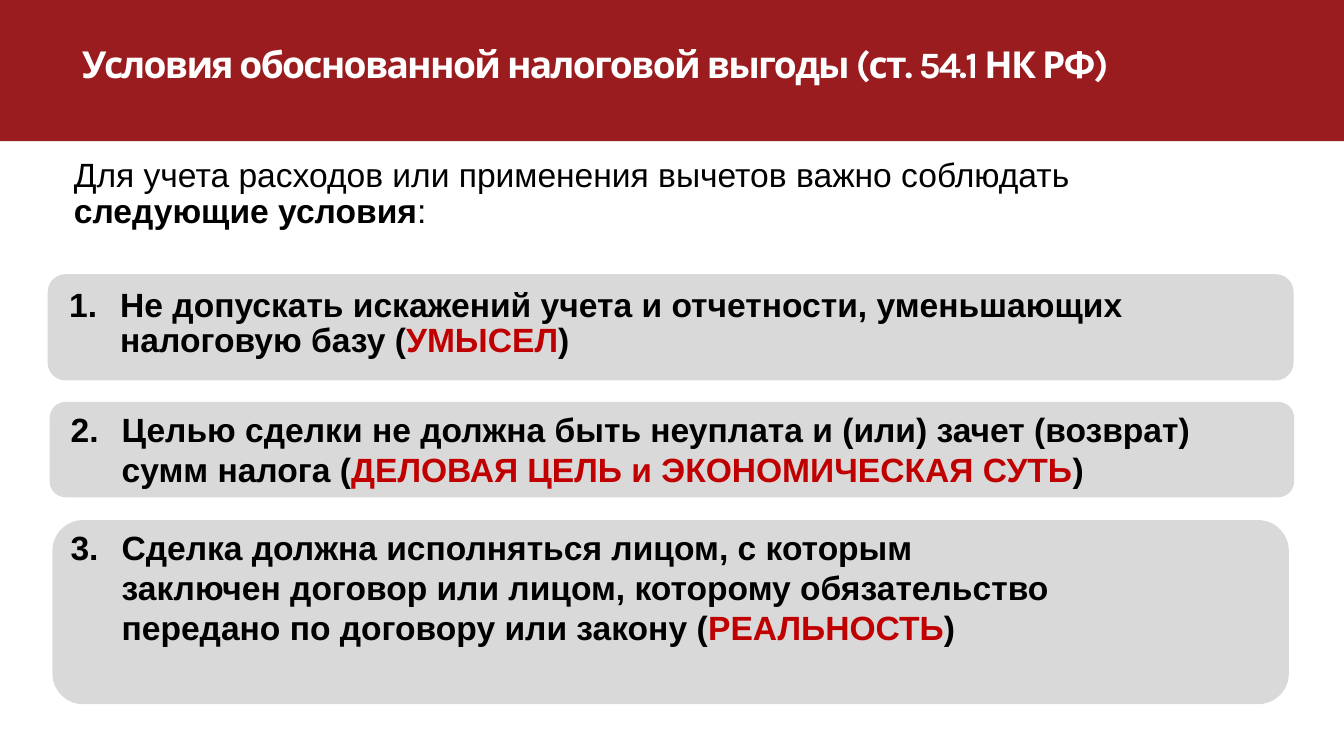
"""Build the slide on the conditions for a justified tax benefit."""
from dataclasses import dataclass

from lxml.etree import SubElement
from pptx import Presentation
from pptx.dml.color import RGBColor as Rgb
from pptx.enum.shapes import MSO_SHAPE as Kind
from pptx.enum.text import MSO_ANCHOR as Anchor
from pptx.enum.text import MSO_AUTO_SIZE as Fit
from pptx.enum.text import PP_ALIGN as Align
from pptx.oxml.ns import qn
from pptx.util import Inches, Pt

UNIT = Inches(0.1)
COLS, ROWS = 100, 56.25


@dataclass(frozen=True)
class Theme:
    band: Rgb = Rgb(0x9A, 0x1C, 0x1F)
    card: Rgb = Rgb(0xD9, 0xD9, 0xD9)
    mark: Rgb = Rgb(0xC0, 0x00, 0x00)
    ink: Rgb = Rgb(0x00, 0x00, 0x00)
    white: Rgb = Rgb(0xFF, 0xFF, 0xFF)
    head: float = 19.9
    body: float = 18
    lead: float = 19
    head_font: str = "Karla"
    body_font: str = "Arial"


@dataclass(frozen=True)
class Area:
    col: float
    row: float
    wide: float
    high: float

    def place(self) -> list[int]:
        return [int(n * UNIT) for n in (self.col, self.row, self.wide, self.high)]


@dataclass(frozen=True)
class Span:
    text: str
    bold: bool = True
    color: Rgb = Theme.ink


@dataclass(frozen=True)
class Rule:
    card: Area
    box: Area
    text: str
    key: str
    tight: bool = False


THEME = Theme()
RULES = [
    Rule(Area(3.55, 20.4, 92.7, 7.9), Area(4.65, 21, 80, 7.3),
         "Не допускать искажений учета и отчетности, уменьшающих налоговую базу (",
         "УМЫСЕЛ", True),
    Rule(Area(3.7, 29.9, 92.6, 7.1), Area(4.75, 29.93, 86.2, 7.1),
         "Целью сделки не должна быть неуплата и (или) зачет (возврат) сумм налога (",
         "ДЕЛОВАЯ ЦЕЛЬ и ЭКОНОМИЧЕСКАЯ СУТЬ"),
    Rule(Area(3.9, 38.7, 92, 13.7), Area(4.75, 38.7, 74.3, 10.1),
         "Сделка должна исполняться лицом, с которым заключен договор или лицом, "
         "которому обязательство передано по договору или закону (",
         "РЕАЛЬНОСТЬ"),
]


def style(run, font: str, size: float, bold: bool, color: Rgb) -> None:
    run.font.name = font
    run.font.size = Pt(size)
    run.font.bold = bold
    run.font.color.rgb = color


def add_block(slide, kind: Kind, area: Area, color: Rgb) -> None:
    block = slide.shapes.add_shape(kind, *area.place())
    block.shadow.inherit = False
    block.fill.solid()
    block.fill.fore_color.rgb = color
    block.line.fill.background()


def add_text(slide, area: Area, spans: list[Span], tight: bool):
    frame = slide.shapes.add_textbox(*area.place()).text_frame
    frame.word_wrap = True
    frame.margin_left = frame.margin_right = Inches(0.05)
    frame.margin_top = frame.margin_bottom = Inches(0.05)
    para = frame.paragraphs[0]
    para.text = spans[0].text
    for span in spans[1:]:
        para.add_run().text = span.text
    for run, span in zip(para.runs, spans):
        style(run, THEME.body_font, THEME.body, span.bold, span.color)
    if tight:
        para.line_spacing = Pt(THEME.lead)
    return para


def number(para, start: int) -> None:
    props = para._p.get_or_add_pPr()
    props.set("marL", str(Inches(0.38)))
    props.set("indent", str(-Inches(0.38)))
    SubElement(props, qn("a:buFont"), typeface=THEME.body_font)
    SubElement(props, qn("a:buAutoNum"), type="arabicPeriod", startAt=str(start))


def add_title(slide, area: Area, text: str) -> None:
    title = slide.shapes.title
    title.left, title.top, title.width, title.height = area.place()
    title.element.getparent().append(title.element)
    frame = title.text_frame
    frame.text = text
    frame.auto_size = Fit.NONE
    frame.vertical_anchor = Anchor.TOP
    para = frame.paragraphs[0]
    para.alignment = Align.LEFT
    para.line_spacing = Pt(22)
    for run in para.runs:
        style(run, THEME.head_font, THEME.head, True, THEME.white)
        run.font._element.set("spc", "-94")


def main() -> None:
    deck = Presentation()
    deck.slide_width, deck.slide_height = int(COLS * UNIT), int(ROWS * UNIT)
    slide = deck.slides.add_slide(deck.slide_layouts[5])
    add_block(slide, Kind.RECTANGLE, Area(0, 0, COLS, 10.5), THEME.band)
    add_title(slide, Area(5.1, 2.85, 92.1, 4.5),
              "Условия обоснованной налоговой выгоды (ст. 54.1 НК РФ)")
    intro = [Span("Для учета расходов или применения вычетов важно соблюдать\v", False),
             Span("следующие условия"), Span(":", False)]
    add_text(slide, Area(5, 11.35, 80, 7.7), intro, True)
    for start, rule in enumerate(RULES, 1):
        add_block(slide, Kind.ROUNDED_RECTANGLE, rule.card, THEME.card)
        spans = [Span(rule.text), Span(rule.key, color=THEME.mark), Span(")")]
        number(add_text(slide, rule.box, spans, rule.tight), start)
    deck.save("out.pptx")


if __name__ == "__main__":
    main()
